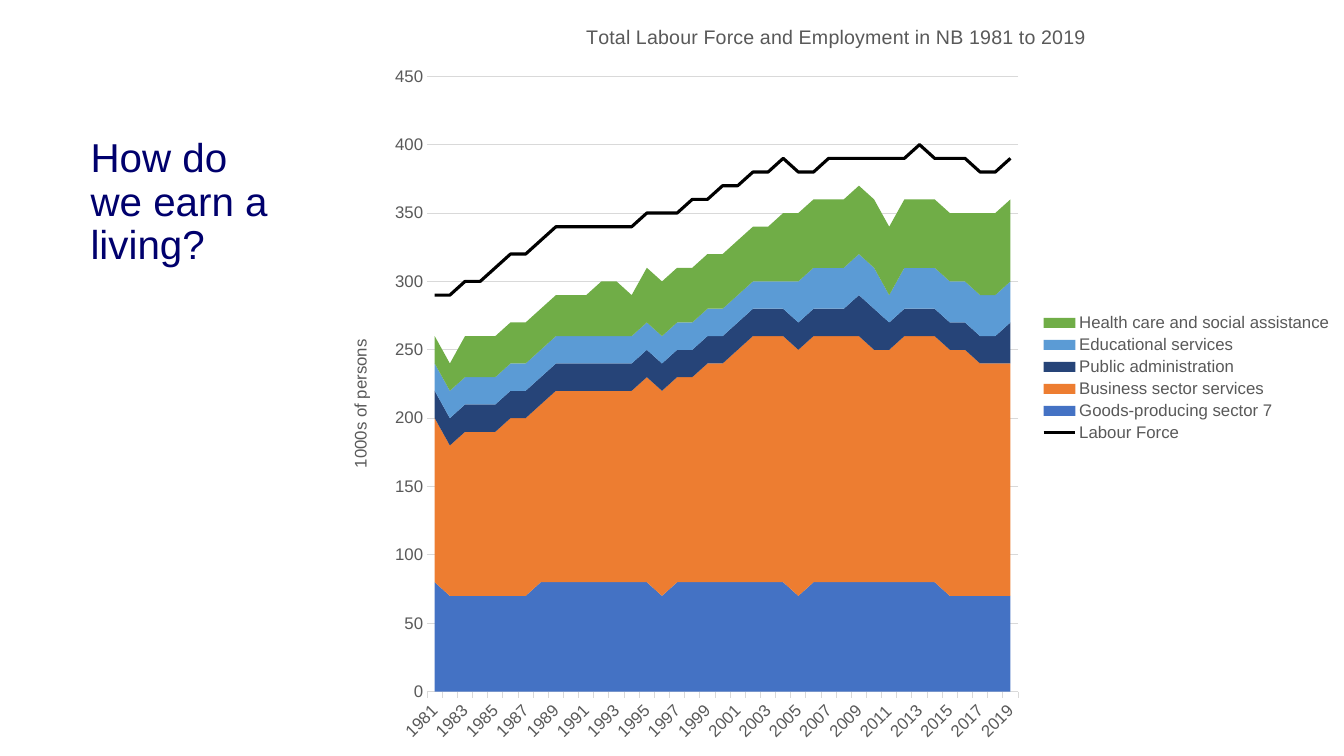
from dataclasses import dataclass

from lxml import etree
from pptx import Presentation
from pptx.chart.data import CategoryChartData
from pptx.dml.color import RGBColor
from pptx.enum.chart import XL_CHART_TYPE, XL_LEGEND_POSITION, XL_MARKER_STYLE, XL_TICK_MARK
from pptx.enum.text import MSO_ANCHOR
from pptx.oxml import parse_xml
from pptx.oxml.ns import nsdecls, qn
from pptx.util import Inches, Pt

AREA_STACKED = XL_CHART_TYPE.AREA_STACKED
LEGEND_RIGHT = XL_LEGEND_POSITION.RIGHT
NO_MARKER = XL_MARKER_STYLE.NONE
TICK_NONE, TICK_OUT = XL_TICK_MARK.NONE, XL_TICK_MARK.OUTSIDE
TOP = MSO_ANCHOR.TOP

YEARS = [str(year) for year in range(1981, 2020)]

# 1000s of persons; the bands stack from the bottom up, the last series is a line
SERIES = {
    "Goods-producing sector 7": [
        80, 70, 70, 70, 70, 70, 70, 80, 80, 80, 80, 80, 80, 80, 80, 70, 80, 80, 80, 80,
        80, 80, 80, 80, 70, 80, 80, 80, 80, 80, 80, 80, 80, 80, 70, 70, 70, 70, 70],
    "Business sector services": [
        120, 110, 120, 120, 120, 130, 130, 130, 140, 140, 140, 140, 140, 140, 150, 150, 150, 150, 160, 160,
        170, 180, 180, 180, 180, 180, 180, 180, 180, 170, 170, 180, 180, 180, 180, 180, 170, 170, 170],
    "Public administration": [20] * 28 + [30] * 2 + [20] * 8 + [30],
    "Educational services": [20] * 24 + [30] * 6 + [20] + [30] * 8,
    "Health care and social assistance": (
        [20] * 2 + [30] * 9 + [40] * 2 + [30] + [40] * 9 + [50] * 13 + [60] * 3),
    "Labour Force": [
        290, 290, 300, 300, 310, 320, 320, 330, 340, 340, 340, 340, 340, 340, 350, 350, 350, 360, 360, 370,
        370, 380, 380, 390, 380, 380, 390, 390, 390, 390, 390, 390, 400, 390, 390, 390, 380, 380, 390],
}


@dataclass(frozen=True)
class Theme:
    font: str = "Arial"
    heading: str = "00006D"
    label: str = "595959"
    grid: str = "D9D9D9"
    line: str = "000000"
    bands: tuple = ("4472C4", "ED7D31", "264478", "5B9BD5", "70AD47")
    heading_size: float = 28.8
    title_size: float = 14
    label_size: float = 12


def style_font(font, name, size, color):
    font.name, font.size, font.bold = name, Pt(size), False
    font.color.rgb = RGBColor.from_string(color)


def write_text(tf, text, *, font, size, color, spacing=None):
    p = tf.paragraphs[0]
    p.line_spacing = spacing
    r = p.add_run()
    r.text = text
    style_font(r.font, font, size, color)


def layout_xml(x, y, w=None, h=None, inner=False):
    """Build a manual chart layout from fractions of the chart's size."""
    layout = etree.Element(qn("c:layout"))
    manual = etree.SubElement(layout, qn("c:manualLayout"))
    values = [("layoutTarget", "inner" if inner else None), ("xMode", "edge"), ("yMode", "edge"),
              ("x", x), ("y", y), ("w", w), ("h", h)]
    for tag, value in values:
        if value is not None:
            etree.SubElement(manual, qn(f"c:{tag}")).set("val", str(value))
    return layout


def set_layout(parent, layout, after=None):
    for old in parent.findall(qn("c:layout")):
        parent.remove(old)
    if after is None:
        parent.insert(0, layout)
    else:
        parent.find(qn(after)).addnext(layout)


def move_last_series_to_line(chart):
    """Turn the last area series into a line on the same axes."""
    area = chart.plots[0]._element
    ser = area.findall(qn("c:ser"))[-1]
    line = parse_xml(f'<c:lineChart {nsdecls("c")}><c:grouping val="standard"/>'
                     '<c:varyColors val="0"/></c:lineChart>')
    line.append(ser)
    etree.SubElement(line, qn("c:marker")).set("val", "1")
    for ax_id in area.findall(qn("c:axId")):
        etree.SubElement(line, qn("c:axId")).set("val", ax_id.get("val"))
    area.addnext(line)


class SlideBuilder:
    def __init__(self, prs, theme):
        self.theme = theme
        self.s = prs.slides.add_slide(prs.slide_layouts[6])

    def heading(self, text, x, y, w, h):
        t = self.theme
        tf = self.s.shapes.add_textbox(Inches(x), Inches(y), Inches(w), Inches(h)).text_frame
        tf.word_wrap = True
        tf.vertical_anchor = TOP
        write_text(tf, text, font=t.font, size=t.heading_size, color=t.heading, spacing=0.9)

    def employment_chart(self, title, axis_title, x, y, w, h):
        t = self.theme
        data = CategoryChartData()
        data.categories = YEARS
        for name, values in SERIES.items():
            data.add_series(name, values)
        chart = self.s.shapes.add_chart(
            AREA_STACKED, Inches(x), Inches(y), Inches(w), Inches(h), data).chart
        move_last_series_to_line(chart)
        style_font(chart.font, t.font, t.label_size, t.label)
        chart.has_title = True
        write_text(chart.chart_title.text_frame, title,
                   font=t.font, size=t.title_size, color=t.label)
        chart.chart_title.include_in_layout = False
        self.color_series(chart)
        self.format_axes(chart, axis_title)
        self.add_legend(chart)
        set_layout(chart.plots[0]._element.getparent(),
                   layout_xml(0.097, 0.101, 0.582, 0.814, inner=True))

    def color_series(self, chart):
        areas, lines = chart.plots
        areas.vary_by_categories = False
        for series, color in zip(areas.series, self.theme.bands):
            series.format.fill.solid()
            series.format.fill.fore_color.rgb = RGBColor.from_string(color)
            series.format.line.fill.background()
        labour = lines.series[0]
        labour.smooth = False
        labour.marker.style = NO_MARKER
        labour.format.line.width = Pt(2.25)
        labour.format.line.color.rgb = RGBColor.from_string(self.theme.line)

    def format_axes(self, chart, axis_title):
        t = self.theme
        years, persons = chart.category_axis, chart.value_axis
        for axis, tick in ((years, TICK_OUT), (persons, TICK_NONE)):
            axis.major_tick_mark, axis.minor_tick_mark = tick, TICK_NONE
            style_font(axis.tick_labels.font, t.font, t.label_size, t.label)
        persons.minimum_scale, persons.maximum_scale, persons.major_unit = 0, 450, 50
        persons.has_major_gridlines = True
        persons.tick_labels.number_format = "0"
        persons.tick_labels.number_format_is_linked = False
        persons.format.line.fill.background()
        for line in (years.format.line, persons.major_gridlines.format.line):
            line.width = Pt(0.75)
            line.color.rgb = RGBColor.from_string(t.grid)
        write_text(persons.axis_title.text_frame, axis_title,
                   font=t.font, size=t.label_size, color=t.label)
        body = persons.axis_title.text_frame._txBody.find(qn("a:bodyPr"))
        body.set("rot", "-5400000")
        body.set("vert", "horz")
        set_layout(persons.axis_title._element, layout_xml(0.018, 0.445), after="c:tx")
        persons._element.find(qn("c:crossBetween")).set("val", "between")
        years._element.find(qn("c:txPr")).find(qn("a:bodyPr")).set("rot", "-2700000")
        skip = etree.Element(qn("c:tickLblSkip"))
        skip.set("val", "2")
        years._element.find(qn("c:noMultiLvlLbl")).addprevious(skip)

    def add_legend(self, chart):
        chart.has_legend = True
        legend = chart.legend
        legend.position, legend.include_in_layout = LEGEND_RIGHT, False
        style_font(legend.font, self.theme.font, self.theme.label_size, self.theme.label)
        set_layout(legend._element, layout_xml(0.695, 0.41, 0.3, 0.18), after="c:legendPos")


def main():
    prs = Presentation()
    prs.slide_width, prs.slide_height = Inches(13.33), Inches(7.5)
    slide = SlideBuilder(prs, Theme())
    slide.heading("How do we earn a living?", 0.8, 1.32, 2.05, 1.5)
    slide.employment_chart("Total Labour Force and Employment in NB 1981 to 2019",
                           "1000s of persons", 3.26, 0, 10.07, 7.5)
    prs.save("out.pptx")


if __name__ == "__main__":
    main()
